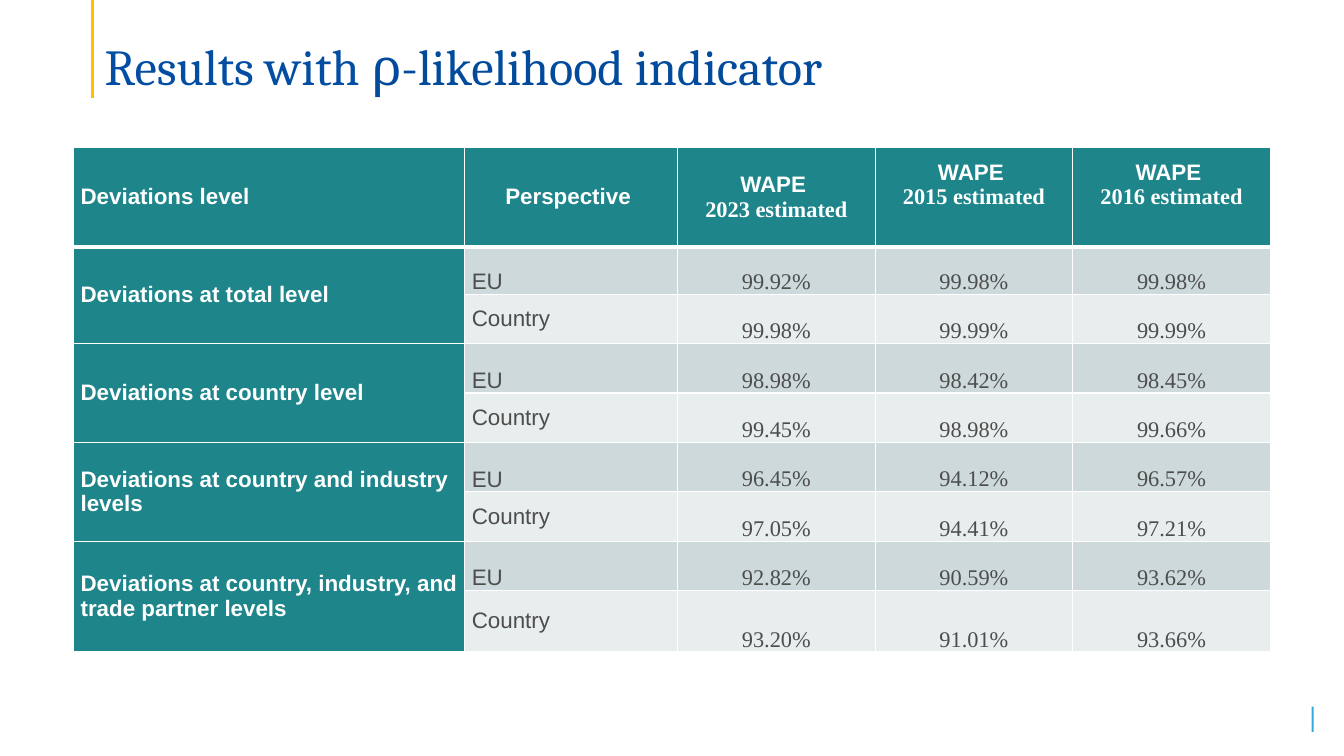
from dataclasses import dataclass
from lxml.etree import SubElement as Sub
from pptx import Presentation
from pptx.dml.color import RGBColor as Color
from pptx.enum.shapes import MSO_CONNECTOR as Link, MSO_SHAPE as Form
from pptx.enum.text import MSO_ANCHOR as Anchor, PP_ALIGN as Align
from pptx.oxml import parse_xml
from pptx.oxml.ns import nsdecls, qn
from pptx.util import Inches, Pt

WHITE = Color(0xFF, 0xFF, 0xFF)
TEAL = Color(0x1E, 0x85, 0x8B)
MIST = Color(0xCD, 0xD9, 0xDA)
PALE = Color(0xE8, 0xED, 0xEE)
GREY = Color(0x4D, 0x4D, 0x4D)
NAVY = Color(0x03, 0x4E, 0xA2)
DEEP = Color(0x02, 0x4B, 0x9C)
GOLD = Color(0xFF, 0xC0, 0x00)
SKY = Color(0x32, 0xAA, 0xDC)
SANS, SERIF, TITLE = "Arial", "Times New Roman", "Cambria"

WIDE, HIGH = Inches(13.33), Inches(7.5)
COLS, ROWS = 1333, 750


@dataclass
class Level:
    name: str
    union: list[str]
    land: list[str]


LEVELS = [
    Level("Deviations at total level",
          ["99.92%", "99.98%", "99.98%"], ["99.98%", "99.99%", "99.99%"]),
    Level("Deviations at country level",
          ["98.98%", "98.42%", "98.45%"], ["99.45%", "98.98%", "99.66%"]),
    Level("Deviations at country and industry levels",
          ["96.45%", "94.12%", "96.57%"], ["97.05%", "94.41%", "97.21%"]),
    Level("Deviations at country, industry, and trade partner levels",
          ["92.82%", "90.59%", "93.62%"], ["93.20%", "91.01%", "93.66%"]),
]
YEARS = [2023, 2015, 2016]
SPANS = [388, 211] + [196] * len(YEARS)
DEPTHS = [99, 47] + [49] * 6 + [61]


def across(count: float) -> int:
    return round(WIDE * count / COLS)


def down(count: float) -> int:
    return round(HIGH * count / ROWS)


def write(frame, text: str, *, size: float = 16, font: str = SANS,
          color: Color = GREY, bold: bool = False, align=Align.LEFT,
          fresh: bool = False, pitch: float = 1.0) -> None:
    para = frame.add_paragraph() if fresh else frame.paragraphs[-1]
    para.alignment, para.line_spacing = align, pitch
    run = para.add_run()
    run.text = text
    run.font.size, run.font.name = Pt(size), font
    run.font.bold, run.font.color.rgb = bold, color


def paint(cell, fill: Color, anchor, top: float = 1, base: float = 1) -> None:
    cell.fill.solid()
    cell.fill.fore_color.rgb = fill
    cell.vertical_anchor = anchor
    cell.margin_left = cell.margin_right = across(7)
    cell.margin_top = cell.margin_bottom = 0
    props = cell._tc.get_or_add_tcPr()
    for spot, (side, width) in enumerate(zip("LRTB", (1, 1, top, base))):
        props.insert(spot, parse_xml(
            f'<a:ln{side} {nsdecls("a")} w="{Pt(width)}"><a:solidFill>'
            f'<a:srgbClr val="{WHITE}"/></a:solidFill></a:ln{side}>'))


def draw_head(table) -> None:
    cells = [table.cell(0, col) for col in range(len(SPANS))]
    for cell in cells:
        paint(cell, TEAL, Anchor.MIDDLE, base=3)
    look = dict(color=WHITE, bold=True)
    write(cells[0].text_frame, "Deviations level", **look)
    look["align"] = Align.CENTER
    write(cells[1].text_frame, "Perspective ", **look)
    for cell, year in zip(cells[2:], YEARS):
        write(cell.text_frame, "WAPE ", **look)
        write(cell.text_frame, f"{year} estimated", font=SERIF, fresh=True, **look)
    for cell in cells[3:]:
        cell.margin_bottom = down(24)


def draw_level(table, first: int, level: Level) -> None:
    lines = [("EU", level.union, MIST, Anchor.BOTTOM),
             ("Country", level.land, PALE, Anchor.MIDDLE)]
    for row, (view, rates, fill, anchor) in enumerate(lines, first):
        top = 3 if row == 1 else 1
        paint(table.cell(row, 0), TEAL, Anchor.MIDDLE, top)
        cell = table.cell(row, 1)
        paint(cell, fill, anchor, top)
        write(cell.text_frame, view)
        for col, rate in enumerate(rates, 2):
            cell = table.cell(row, col)
            paint(cell, fill, Anchor.BOTTOM, top)
            write(cell.text_frame, rate, font=SERIF, align=Align.CENTER)
    lead = table.cell(first, 0)
    lead.merge(table.cell(first + 1, 0))
    write(lead.text_frame, level.name, color=WHITE, bold=True)


def draw_table(shapes) -> None:
    table = shapes.add_table(len(DEPTHS), len(SPANS), across(73), down(146),
                             across(sum(SPANS)), down(sum(DEPTHS))).table
    table.horz_banding = False
    for col, span in zip(table.columns, SPANS):
        col.width = across(span)
    for row, depth in zip(table.rows, DEPTHS):
        row.height = down(depth)
    draw_head(table)
    for place, level in enumerate(LEVELS):
        draw_level(table, 1 + 2 * place, level)


def draw_marks(shapes) -> None:
    tick = shapes.add_shape(Form.RECTANGLE, across(1301), down(701),
                            across(2), down(25))
    tick.shadow.inherit = False
    tick.fill.solid()
    tick.fill.fore_color.rgb = SKY
    tick.line.fill.background()
    rule = shapes.add_connector(Link.STRAIGHT, across(92), 0, across(92), down(97))
    rule.line.color.rgb, rule.line.width = GOLD, Pt(2.25)
    Sub(rule._element.spPr, qn("a:effectLst"))


def draw_title(shapes) -> None:
    frame = shapes.add_textbox(across(94), down(12), across(1167), down(84)).text_frame
    frame.word_wrap, frame.vertical_anchor = True, Anchor.BOTTOM
    frame.margin_bottom = 0
    look = dict(size=36, font=TITLE, pitch=0.9)
    write(frame, "Results with ", color=NAVY, **look)
    write(frame, "ρ-likelihood indicator", color=DEEP, **look)


def main() -> None:
    deck = Presentation()
    deck.slide_width, deck.slide_height = WIDE, HIGH
    shapes = deck.slides.add_slide(deck.slide_layouts[6]).shapes
    draw_marks(shapes)
    draw_table(shapes)
    draw_title(shapes)
    deck.save("out.pptx")


if __name__ == "__main__":
    main()
